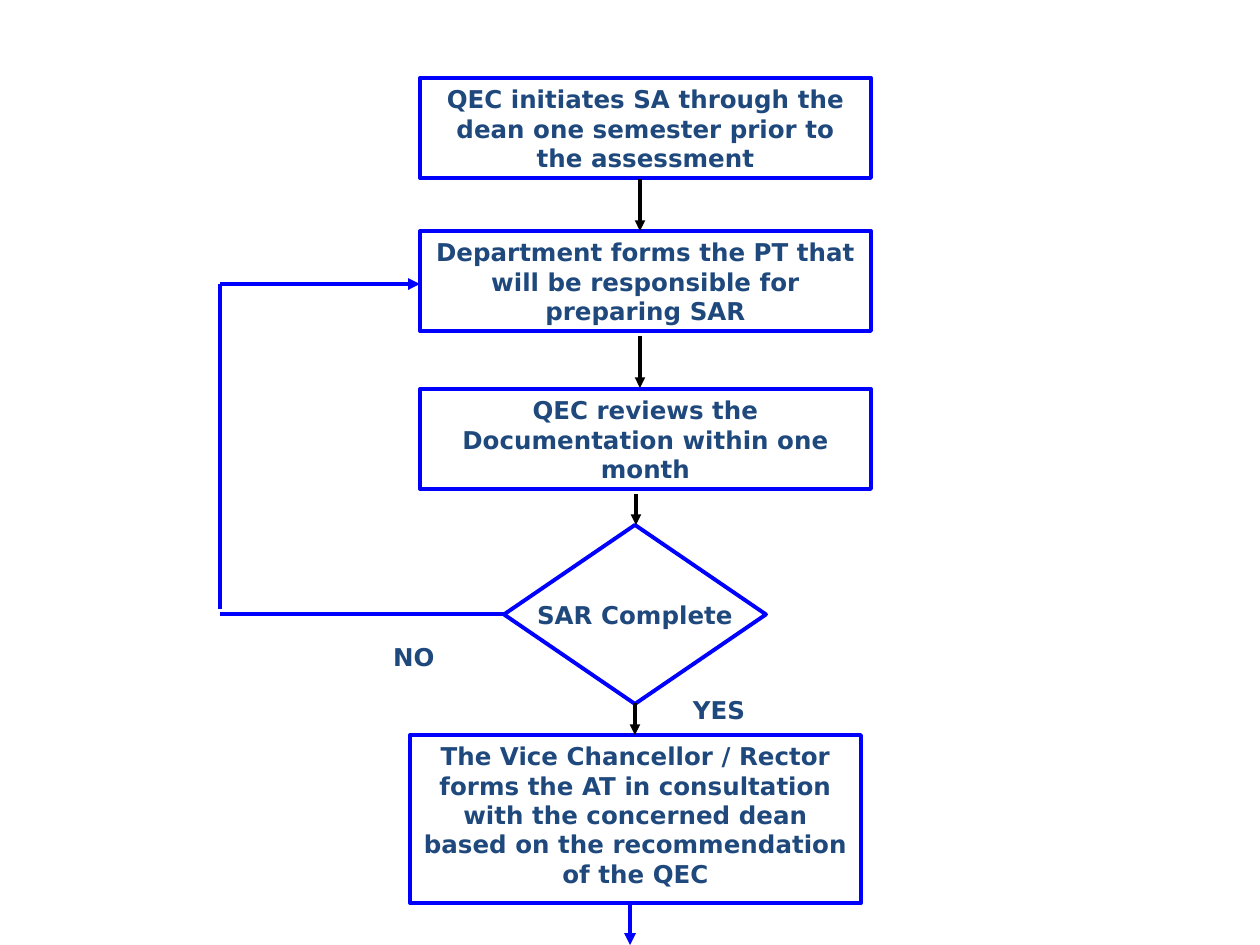
from lxml import etree
from pptx import Presentation
from pptx.dml.color import RGBColor
from pptx.enum.shapes import MSO_CONNECTOR, MSO_SHAPE
from pptx.enum.text import MSO_ANCHOR, PP_ALIGN
from pptx.oxml.ns import qn
from pptx.util import Pt

EMU_PER_PX = 914400 / 126
BLUE = RGBColor(0x00, 0x00, 0xFF)
BLACK = RGBColor(0x00, 0x00, 0x00)
NAVY = RGBColor(0x1F, 0x49, 0x7D)
RECTANGLE = MSO_SHAPE.RECTANGLE
DIAMOND = MSO_SHAPE.DIAMOND
STRAIGHT = MSO_CONNECTOR.STRAIGHT
TOP = MSO_ANCHOR.TOP
MIDDLE = MSO_ANCHOR.MIDDLE
CENTER = PP_ALIGN.CENTER

BOX_WIDTH = 451
BOX_HEIGHT = 100
BOX_LEFT = 420
STEPS = [
    (78, "QEC initiates SA through the dean one semester prior to the assessment"),
    (231, "Department forms the PT that will be responsible for preparing SAR"),
    (389, "QEC reviews the Documentation within one month"),
]
DOWN_ARROWS = [(640, 179, 231), (640, 336, 388), (636, 494, 525), (635, 703, 735)]
LOOP_LEFT = 220
LOOP_TOP = 284
LOOP_BOTTOM = 614


def px(length):
    return round(length * EMU_PER_PX)


class Flowchart:
    font_name = "DejaVu Sans"
    font_size = Pt(14)

    def __init__(self, presentation):
        self.slide = presentation.slides.add_slide(presentation.slide_layouts[6])

    def set_text(self, shape, text, anchor, wrap):
        frame = shape.text_frame
        frame.text = text
        frame.word_wrap = wrap
        frame.vertical_anchor = anchor
        paragraph = frame.paragraphs[0]
        paragraph.alignment = CENTER
        font = paragraph.runs[0].font
        font.name = self.font_name
        font.size = self.font_size
        font.bold = True
        font.color.rgb = NAVY

    def node(self, kind, left, top, width, height, text, anchor=TOP, wrap=True):
        shape = self.slide.shapes.add_shape(kind, px(left), px(top), px(width), px(height))
        shape.shadow.inherit = False
        shape.fill.background()
        shape.line.color.rgb = BLUE
        shape.line.width = Pt(2.25)
        self.set_text(shape, text, anchor, wrap)

    def label(self, left, top, text):
        box = self.slide.shapes.add_textbox(px(left), px(top), px(136), px(53))
        self.set_text(box, text, MIDDLE, False)

    def line(self, start, end, color=BLUE, width=2.25, arrow=True):
        connector = self.slide.shapes.add_connector(STRAIGHT, *map(px, start + end))
        connector.line.color.rgb = color
        connector.line.width = Pt(width)
        properties = connector._element.spPr
        if arrow:
            outline = properties.find(qn("a:ln"))
            etree.SubElement(outline, qn("a:tailEnd"), type="triangle")
        etree.SubElement(properties, qn("a:effectLst"))


def main():
    presentation = Presentation()
    presentation.slide_width = px(1260)
    presentation.slide_height = px(945)
    chart = Flowchart(presentation)

    for top, text in STEPS:
        chart.node(RECTANGLE, BOX_LEFT, top, BOX_WIDTH, BOX_HEIGHT, text)
    chart.node(DIAMOND, 504, 525, 262, 179, "SAR Complete", MIDDLE, False)
    chart.node(
        RECTANGLE, 410, 735, BOX_WIDTH, 168,
        "The Vice Chancellor / Rector forms the AT in consultation with the "
        "concerned dean based on the recommendation of the QEC",
    )

    for x, start, end in DOWN_ARROWS:
        chart.line((x, start), (x, end), BLACK, 2)
    chart.line((504, LOOP_BOTTOM), (LOOP_LEFT, LOOP_BOTTOM), arrow=False)
    chart.line((LOOP_LEFT, 609), (LOOP_LEFT, LOOP_TOP), arrow=False)
    chart.line((LOOP_LEFT, LOOP_TOP), (BOX_LEFT, LOOP_TOP))
    chart.line((630, 903), (630, 945))

    chart.label(651, 683, "YES")
    chart.label(346, 630, "NO")
    presentation.save("out.pptx")


if __name__ == "__main__":
    main()
